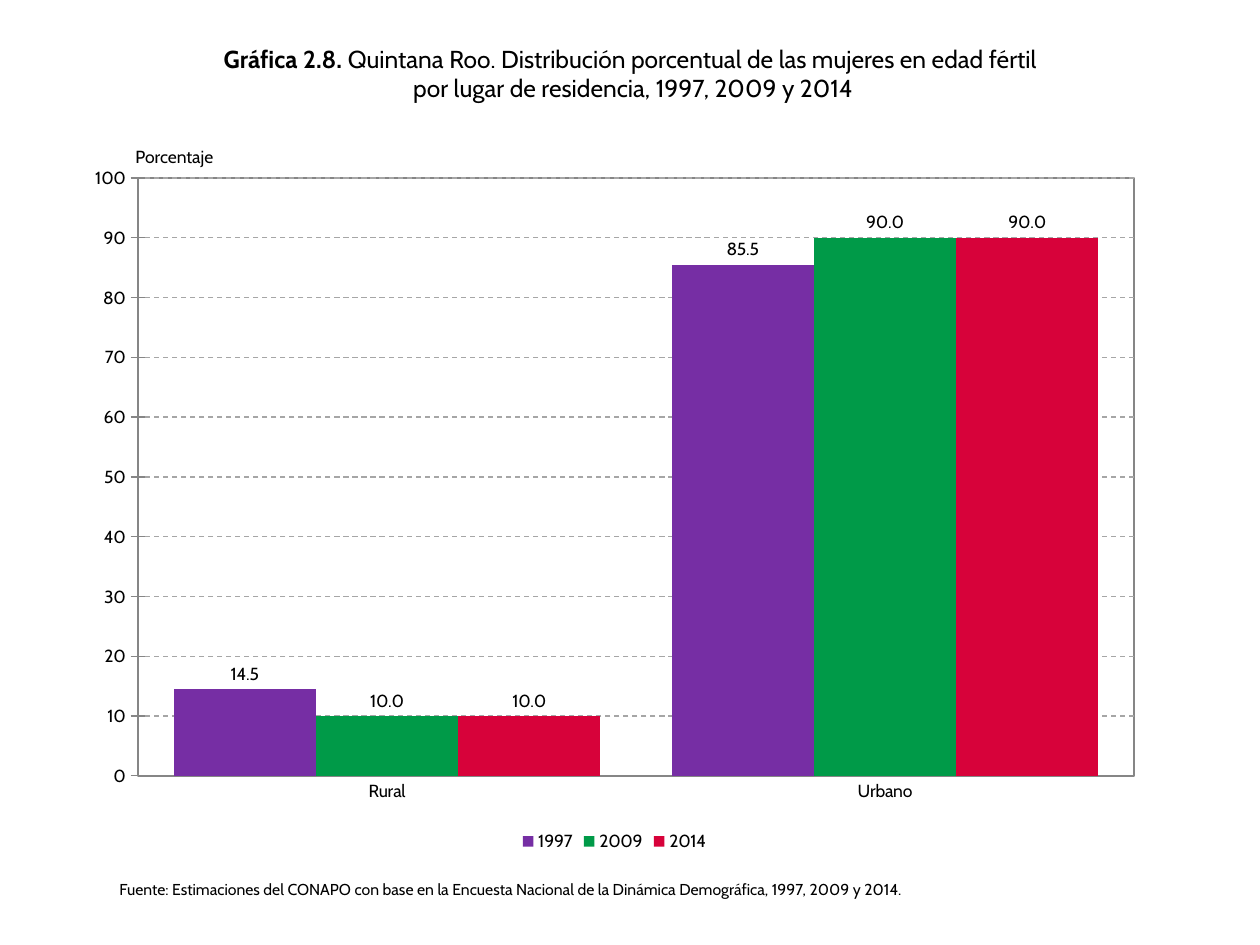
from lxml.etree import SubElement
from pptx import Presentation
from pptx.chart.data import CategoryChartData
from pptx.dml.color import RGBColor
from pptx.enum.chart import XL_CHART_TYPE as ChartType, XL_LABEL_POSITION as LabelPosition
from pptx.enum.chart import XL_LEGEND_POSITION as LegendPosition, XL_TICK_MARK as TickMark
from pptx.enum.dml import MSO_LINE as LineStyle
from pptx.enum.text import MSO_ANCHOR as Anchor, MSO_AUTO_SIZE as AutoSize, PP_ALIGN as Align
from pptx.oxml import parse_xml
from pptx.oxml.ns import nsdecls, qn
from pptx.util import Emu, Inches, Pt

PIXELS_PER_INCH = 126
BLACK = RGBColor(0x00, 0x00, 0x00)
AXIS_GRAY = RGBColor(0x86, 0x86, 0x86)
GRID_GRAY = RGBColor(0xA6, 0xA6, 0xA6)
PURPLE = RGBColor(0x76, 0x2E, 0xA4)
GREEN = RGBColor(0x00, 0x9A, 0x48)
RED = RGBColor(0xD7, 0x02, 0x3A)

RESIDENCES = ["Rural", "Urbano"]
YEARS = [
    ("1997", (14.5, 85.5), PURPLE),
    ("2009", (10, 90), GREEN),
    ("2014", (10, 90), RED),
]


def px(length):
    return Emu(round(length * 914400 / PIXELS_PER_INCH))


def add_text(paragraph, text, font="Cabin", size=10, color=BLACK, bold=False):
    run = paragraph.add_run()
    run.text = text
    run.font.name = font
    run.font.size = Pt(size)
    run.font.bold = bold
    run.font.color.rgb = color


def set_line(line, color, width=0.75):
    line.color.rgb = color
    line.width = Pt(width)


class SlideBuilder:
    def __init__(self, slide, font="Cabin"):
        self.slide = slide
        self.font = font

    def title(self, box, label, lines, size):
        shape = self.slide.shapes.title
        shape.left, shape.top, shape.width, shape.height = map(px, box)
        frame = shape.text_frame
        frame.auto_size = AutoSize.NONE
        frame.vertical_anchor = Anchor.MIDDLE
        paragraph = frame.paragraphs[0]
        paragraph.alignment = Align.CENTER
        add_text(paragraph, label, self.font, size, bold=True)
        for index, line in enumerate(lines):
            if index:
                paragraph.add_line_break()
            add_text(paragraph, line, self.font, size)

    def text(self, box, text, size):
        frame = self.slide.shapes.add_textbox(*map(px, box)).text_frame
        frame.word_wrap = True
        add_text(frame.paragraphs[0], text, self.font, size)

    def column_chart(self, box, plot_box, categories, series_rows, size):
        data = CategoryChartData()
        data.categories = categories
        for name, values, _ in series_rows:
            data.add_series(name, values)
        chart = self.slide.shapes.add_chart(
            ChartType.COLUMN_CLUSTERED, *map(px, box), data).chart
        chart.has_title = False
        chart.font.name = self.font
        chart.font.size = Pt(size)
        chart.font.color.rgb = BLACK
        chart.has_legend = True
        chart.legend.position = LegendPosition.BOTTOM
        chart.legend.include_in_layout = False

        # Columns and their labels
        plot = chart.plots[0]
        plot.gap_width = 50
        plot.overlap = 0
        plot.vary_by_categories = False
        for series, (_, _, color) in zip(plot.series, series_rows):
            series.format.fill.solid()
            series.format.fill.fore_color.rgb = color
            labels = series.data_labels
            labels.show_value = True
            labels.number_format = "#,##0.0"
            labels.number_format_is_linked = False
            labels.position = LabelPosition.OUTSIDE_END

        # Axes and gridlines
        category_axis, value_axis = chart.category_axis, chart.value_axis
        category_axis.major_tick_mark = TickMark.NONE
        value_axis.major_tick_mark = TickMark.CROSS
        value_axis.minimum_scale = 0
        value_axis.maximum_scale = 100
        value_axis.major_unit = 10
        value_axis.tick_labels.number_format = "#,##0"
        value_axis.tick_labels.number_format_is_linked = False
        for axis in (category_axis, value_axis):
            set_line(axis.format.line, AXIS_GRAY)
        grid_line = value_axis.major_gridlines.format.line
        set_line(grid_line, GRID_GRAY)
        grid_line.dash_style = LineStyle.DASH

        self.frame_plot(chart, box, plot_box)

    def frame_plot(self, chart, box, plot_box):
        """Place the inner plot area, outline it and clear the chart's background."""
        chart_space = chart.element
        plot_area = chart_space.find(".//" + qn("c:plotArea"))
        layout = plot_area.find(qn("c:layout"))
        if layout is None:
            layout = parse_xml(f"<c:layout {nsdecls('c')}/>")
            plot_area.insert(0, layout)
        manual = SubElement(layout, qn("c:manualLayout"))
        left, top, width, height = box
        plot_left, plot_top, plot_width, plot_height = plot_box
        settings = {
            "layoutTarget": "inner", "xMode": "edge", "yMode": "edge",
            "x": (plot_left - left) / width, "y": (plot_top - top) / height,
            "w": plot_width / width, "h": plot_height / height,
        }
        for tag, value in settings.items():
            SubElement(manual, qn(f"c:{tag}")).set("val", str(value))
        plot_area.append(parse_xml(
            f"<c:spPr {nsdecls('c', 'a')}><a:noFill/><a:ln w='9525'><a:solidFill>"
            f"<a:srgbClr val='{AXIS_GRAY}'/></a:solidFill></a:ln></c:spPr>"))
        chart_space.find(qn("c:chart")).addnext(parse_xml(
            f"<c:spPr {nsdecls('c', 'a')}><a:noFill/><a:ln><a:noFill/></a:ln></c:spPr>"))


def main():
    presentation = Presentation()
    presentation.slide_width, presentation.slide_height = Inches(10), Inches(7.5)
    title_only = presentation.slide_layouts[5]
    builder = SlideBuilder(presentation.slides.add_slide(title_only))

    # Heading
    builder.title((35, 37, 1191, 72), "Gráfica 2.8. ", [
        "Quintana Roo. Distribución porcentual de las mujeres en edad fértil",
        " por lugar de residencia, 1997, 2009 y 2014"], size=14)

    # Axis caption and source
    builder.text((123, 140, 139, 34), "Porcentaje", size=10)
    builder.text((107, 874, 1052, 32),
                 "Fuente: Estimaciones del CONAPO con base en la Encuesta Nacional "
                 "de la Dinámica Demográfica, 1997, 2009 y 2014.", size=9)

    # Chart
    builder.column_chart((74, 154, 1081, 703), (138, 178, 996, 598),
                         RESIDENCES, YEARS, size=10)
    presentation.save("out.pptx")


if __name__ == "__main__":
    main()
